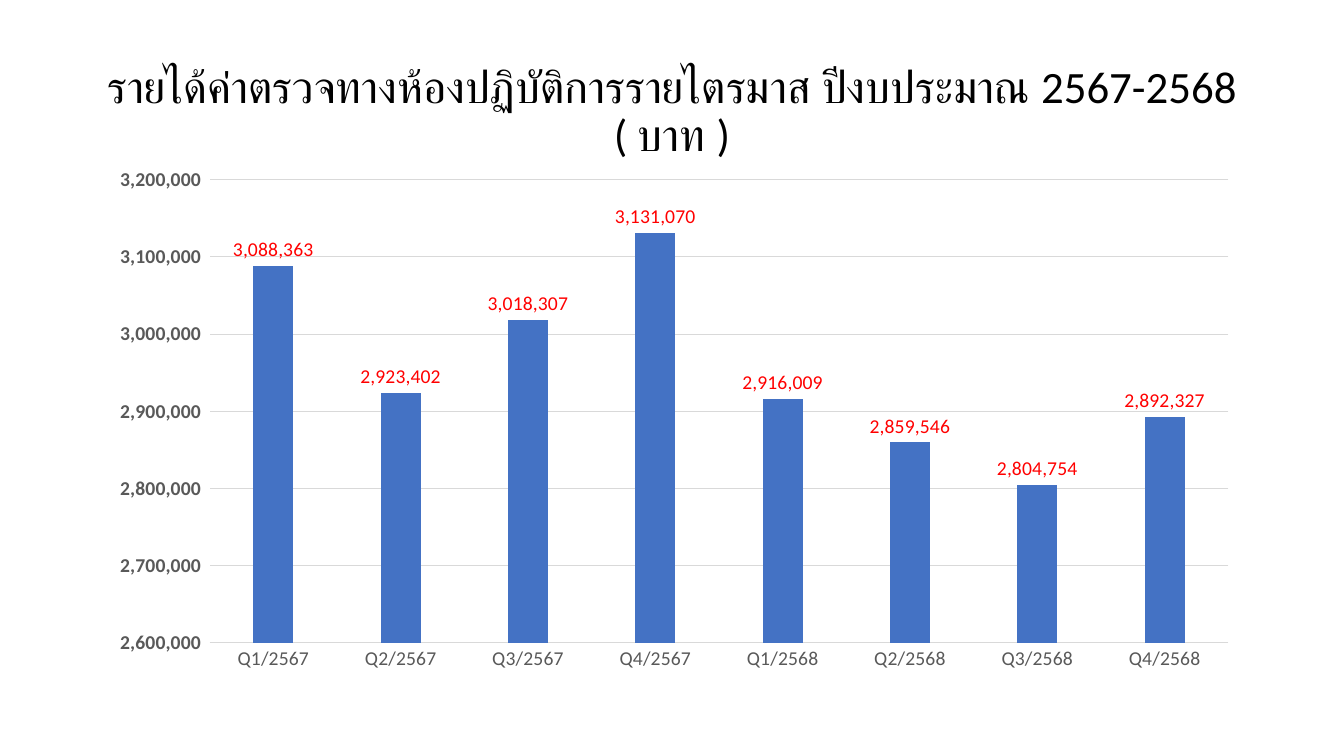
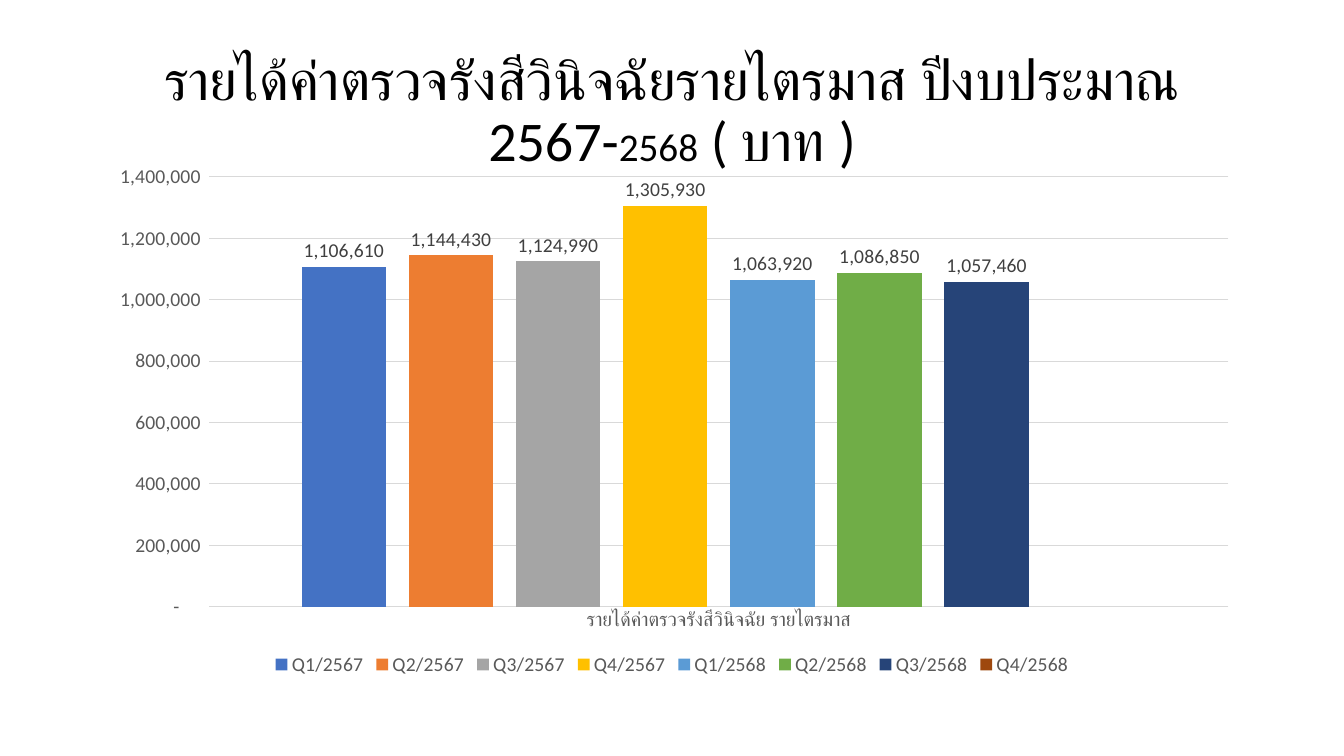
from pptx import Presentation
from pptx.chart.data import CategoryChartData
from pptx.dml.color import RGBColor
from pptx.enum.chart import (XL_CHART_TYPE, XL_LABEL_POSITION,
                             XL_LEGEND_POSITION, XL_TICK_MARK)
from pptx.enum.text import MSO_ANCHOR, MSO_AUTO_SIZE, PP_ALIGN
from pptx.util import Cm, Pt

FACE = "Calibri"
GREY, RULE = "595959", "D9D9D9"
FORMAT = '_(* #,##0_);_(* \\(#,##0\\);_(* "-"??_);_('
LEFT, WIDTH = Cm(2.33), Cm(29.21)
QUARTERS = [f"Q{q}/{year}" for year in (2567, 2568) for q in range(1, 5)]


def paint(target, code):
    """Give a font, fill or line a solid colour from a hex string."""
    if hasattr(target, "solid"):
        target.solid()
        target = target.fore_color
    else:
        target = target.color
    target.rgb = RGBColor.from_string(code)


def style(font, size, code, bold=False):
    for name, value in {"name": FACE, "size": Pt(size), "bold": bold}.items():
        setattr(font, name, value)
    paint(font, code)


LAB = [3088363, 2923402, 3018307, 3131070, 2916009, 2859546, 2804754, 2892327]
XRAY = [1106610, 1144430, 1124990, 1305930, 1063920, 1086850, 1057460, None]

slides = [
    {
        "title": [("รายได้ค่าตรวจทางห้องปฏิบัติการรายไตรมาส ปีงบประมาณ 2567-2568 ( บาท )", 32)],
        "top": 3.96, "height": 13.21,
        "cats": QUARTERS,
        "series": [("Series 1", LAB)],
        "fills": ["4472C4"],
        "label": "FF0000", "bold": True, "legend": False,
        "scale": {"minimum_scale": 2600000, "maximum_scale": 3200000,
                  "major_unit": 100000},
    },
    {
        "title": [("รายได้ค่าตรวจรังสีวินิจฉัยรายไตรมาส ปีงบประมาณ 2567-", 40),
                  ("2568", 28), (" ( บาท )", 40)],
        "top": 3.89, "height": 13.26,
        "cats": ["รายได้ค่าตรวจรังสีวินิจฉัย รายไตรมาส"],
        "series": [(name, [value]) for name, value in zip(QUARTERS, XRAY)],
        "fills": ["4472C4", "ED7D31", "A5A5A5", "FFC000",
                  "5B9BD5", "70AD47", "264478", "9E480E"],
        "label": "404040", "bold": False, "legend": True,
        "scale": {"minimum_scale": 0, "maximum_scale": 1400000,
                  "major_unit": 200000},
    },
]

deck = Presentation()
deck.slide_width, deck.slide_height = Cm(33.87), Cm(19.05)

for item in slides:
    slide = deck.slides.add_slide(deck.slide_layouts[5])

    # Title
    title = slide.shapes.title
    box = {"left": LEFT, "top": Cm(1.01), "width": WIDTH, "height": Cm(3.68)}
    for name, value in box.items():
        setattr(title, name, value)
    frame = title.text_frame
    frame.auto_size = MSO_AUTO_SIZE.NONE
    frame.vertical_anchor = MSO_ANCHOR.MIDDLE
    para = frame.paragraphs[0]
    para.alignment, para.line_spacing = PP_ALIGN.CENTER, 0.9
    for text, size in item["title"]:
        run = para.add_run()
        run.text = text
        style(run.font, size, "000000")

    # Chart
    data = CategoryChartData(number_format=FORMAT)
    data.categories = item["cats"]
    for name, values in item["series"]:
        data.add_series(name, values)
    chart = slide.shapes.add_chart(
        XL_CHART_TYPE.COLUMN_CLUSTERED, LEFT, Cm(item["top"]),
        WIDTH, Cm(item["height"]), data).chart
    style(chart.font, 10, "000000")
    chart.has_title = False
    chart.has_legend = item["legend"]
    if item["legend"]:
        chart.legend.position = XL_LEGEND_POSITION.BOTTOM
        chart.legend.include_in_layout = False
        style(chart.legend.font, 14, GREY)

    # Axes
    cat, val = chart.category_axis, chart.value_axis
    for axis, bold in ((cat, False), (val, item["bold"])):
        axis.major_tick_mark = axis.minor_tick_mark = XL_TICK_MARK.NONE
        style(axis.tick_labels.font, 14, GREY, bold)
    for line in (cat.format.line, val.major_gridlines.format.line):
        paint(line, RULE)
        line.width = Pt(0.75)
    val.format.line.fill.background()
    val.tick_labels.number_format = FORMAT
    val.tick_labels.number_format_is_linked = False
    for name, value in item["scale"].items():
        setattr(val, name, value)

    # Columns
    plot = chart.plots[0]
    plot.gap_width, plot.overlap, plot.vary_by_categories = 219, -27, False
    for series, fill in zip(plot.series, item["fills"]):
        series.invert_if_negative = False
        paint(series.format.fill, fill)
        labels = series.data_labels
        look = {"show_value": True, "number_format": FORMAT,
                "number_format_is_linked": False,
                "position": XL_LABEL_POSITION.OUTSIDE_END}
        for name, value in look.items():
            setattr(labels, name, value)
        style(labels.font, 14, item["label"])

deck.save("out.pptx")
